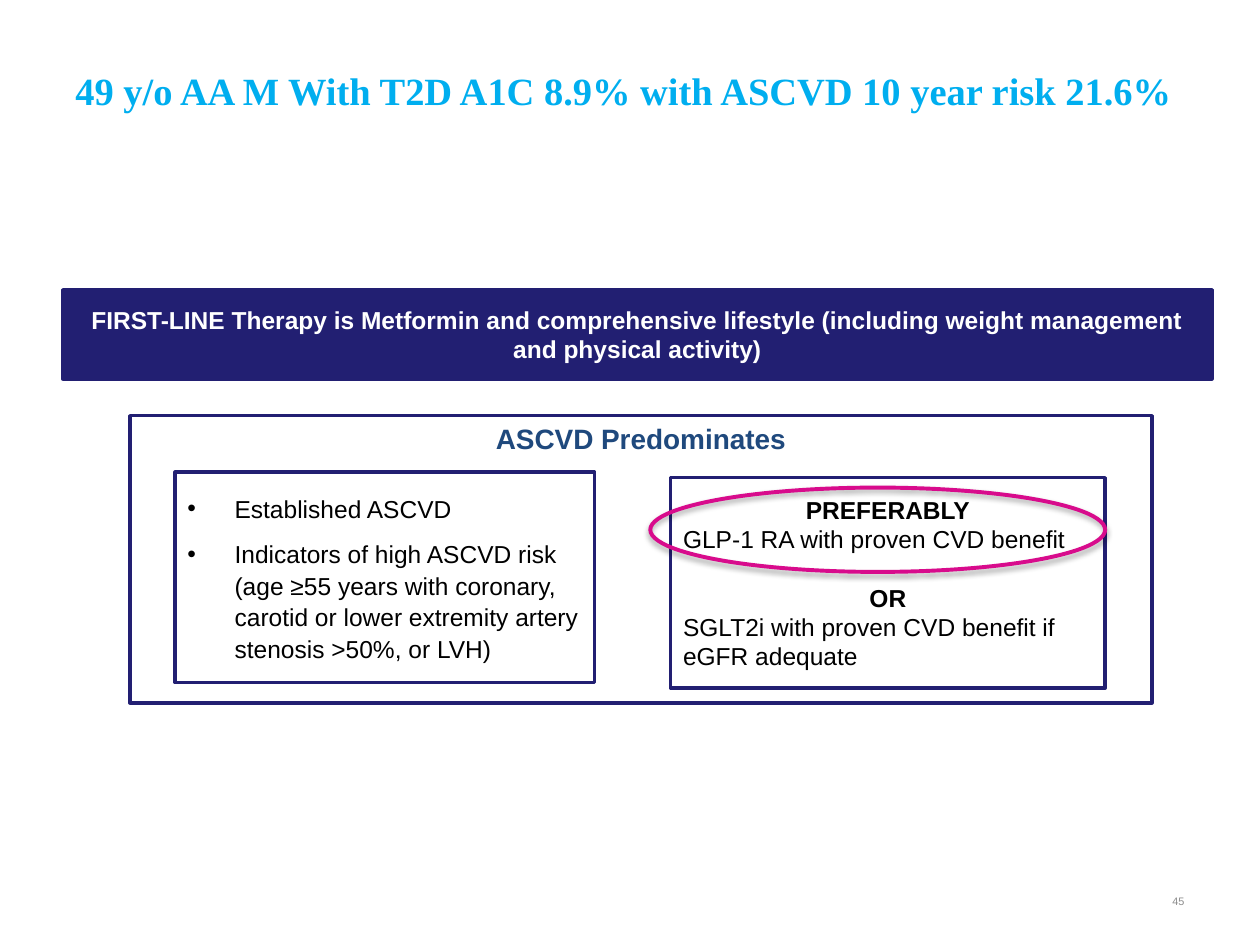
from lxml import etree
from pptx import Presentation
from pptx import util as u
from pptx.dml.color import RGBColor
from pptx.enum import shapes, text
from pptx.oxml import ns

COLORS = {
    "title": "00AEEF", "navy": "221F72", "heading": "1F497D", "ring": "D80B8C",
    "white": "FFFFFF", "black": "000000", "page": "8C8C8C",
}
LEFT, CENTER, RIGHT = text.PP_ALIGN.LEFT, text.PP_ALIGN.CENTER, text.PP_ALIGN.RIGHT
TOP, MIDDLE = text.MSO_ANCHOR.TOP, text.MSO_ANCHOR.MIDDLE


def color(name):
    return RGBColor.from_string(COLORS[name])


def cm_box(box):
    return [u.Cm(length) for length in box]


def inner(box, left, top, width, height):
    """Turn a place relative to box into a place on the slide."""
    return box[0] + left, box[1] + top, width, height


def add_line(frame, words, size, tint, bold=False, align=LEFT, font="Arial"):
    """Write words in the first paragraph if it is free, else in a new one."""
    paragraph = frame.paragraphs[0]
    if paragraph.runs:
        paragraph = frame.add_paragraph()
    paragraph.alignment = align
    run = paragraph.add_run()
    run.text = words
    run.font.name, run.font.size, run.font.bold = font, u.Pt(size), bold
    run.font.color.rgb = color(tint)
    return paragraph


def add_label(slide, box, anchor, *line, **style):
    frame = slide.shapes.add_textbox(*cm_box(box)).text_frame
    frame.word_wrap = True
    frame.vertical_anchor = anchor
    add_line(frame, *line, **style)


def add_panel(slide, box, fill="white", anchor=MIDDLE):
    panel = slide.shapes.add_shape(shapes.MSO_SHAPE.RECTANGLE, *cm_box(box))
    panel.shadow.inherit = False
    panel.fill.solid()
    panel.fill.fore_color.rgb = color(fill)
    panel.line.color.rgb = color("navy")
    panel.line.width = u.Pt(2)
    panel.text_frame.word_wrap = True
    panel.text_frame.vertical_anchor = anchor
    return panel.text_frame


def add_bullet(frame, words):
    paragraph = add_line(frame, words, 14, "black")
    properties = paragraph._p.get_or_add_pPr()
    indent = u.Cm(0.95)
    properties.set("marL", str(indent))
    properties.set("indent", str(-indent))
    font = etree.SubElement(properties, ns.qn("a:buFont"))
    font.set("typeface", "Arial")
    etree.SubElement(properties, ns.qn("a:buChar")).set("char", "•")
    paragraph.line_spacing = 1.07
    paragraph.space_after = u.Pt(8)


def add_ring(slide, box):
    """Draw the highlight ellipse with its soft shadow."""
    ring = slide.shapes.add_shape(shapes.MSO_SHAPE.OVAL, *cm_box(box))
    ring.fill.background()
    ring.line.color.rgb = color("ring")
    ring.line.width = u.Pt(2.25)
    ring.shadow.inherit = False
    effects = ring._element.spPr.find(ns.qn("a:effectLst"))
    shadow = etree.SubElement(
        effects, ns.qn("a:outerShdw"), blurRad=str(u.Pt(3.1)),
        dist=str(u.Pt(1.8)), dir="5400000", rotWithShape="0")
    tint = etree.SubElement(shadow, ns.qn("a:srgbClr"), val=COLORS["black"])
    etree.SubElement(tint, ns.qn("a:alpha"), val="35000")


def add_first_line_banner(slide, box):
    add_line(add_panel(slide, box, fill="navy"),
             "FIRST-LINE Therapy is Metformin and comprehensive lifestyle "
             "(including weight management and physical activity)",
             14, "white", bold=True, align=CENTER)


def add_criteria(slide, box):
    criteria = add_panel(slide, box)
    add_bullet(criteria, "Established ASCVD")
    add_bullet(criteria, "Indicators of high ASCVD risk (age ≥55 years with coronary, "
                         "carotid or lower extremity artery stenosis >50%, or LVH)")


def add_therapies(slide, box):
    therapies = add_panel(slide, box)
    options = [
        ("PREFERABLY", "GLP-1 RA with proven CVD benefit", 0),
        ("OR", "SGLT2i with proven CVD benefit if eGFR adequate", 16.5),
    ]
    for heading, therapy, gap in options:
        line = add_line(therapies, heading, 14, "black", bold=True, align=CENTER)
        if gap:
            line.space_before = u.Pt(gap)
        add_line(therapies, therapy, 14, "black")
    add_ring(slide, inner(box, -0.41, 0.2, 9.17, 1.7))


def add_ascvd_pathway(slide, box):
    pathway = add_panel(slide, box, anchor=TOP)
    add_line(pathway, "ASCVD Predominates", 16, "heading", bold=True, align=CENTER)
    add_criteria(slide, inner(box, 0.91, 1.14, 8.46, 4.24))
    add_therapies(slide, inner(box, 10.9, 1.25, 8.76, 4.24))


def main():
    deck = Presentation()
    deck.slide_width, deck.slide_height = u.Cm(25.4), u.Cm(19.05)
    slide = deck.slides.add_slide(deck.slide_layouts[6])
    add_label(slide, (1.27, 1.22, 22.86, 1.73), TOP,
              "49 y/o AA M With T2D A1C 8.9% with ASCVD 10 year risk 21.6%",
              22, "title", bold=True, font="Times New Roman")
    add_label(slide, (18.21, 17.65, 5.92, 1.02), MIDDLE, "45", 6.2, "page", align=RIGHT)
    add_first_line_banner(slide, (1.27, 5.84, 23.16, 1.8))
    add_ascvd_pathway(slide, (2.62, 8.38, 20.6, 5.79))
    deck.save("out.pptx")


if __name__ == "__main__":
    main()
